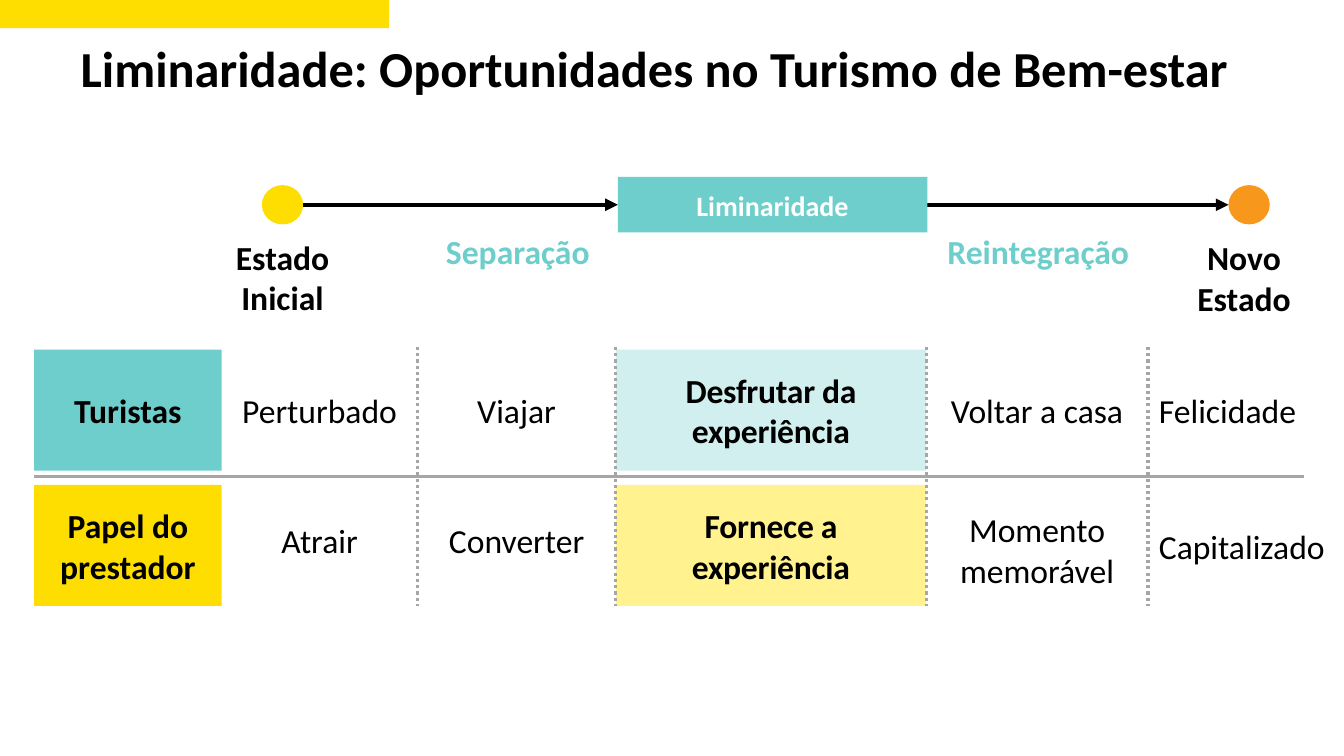
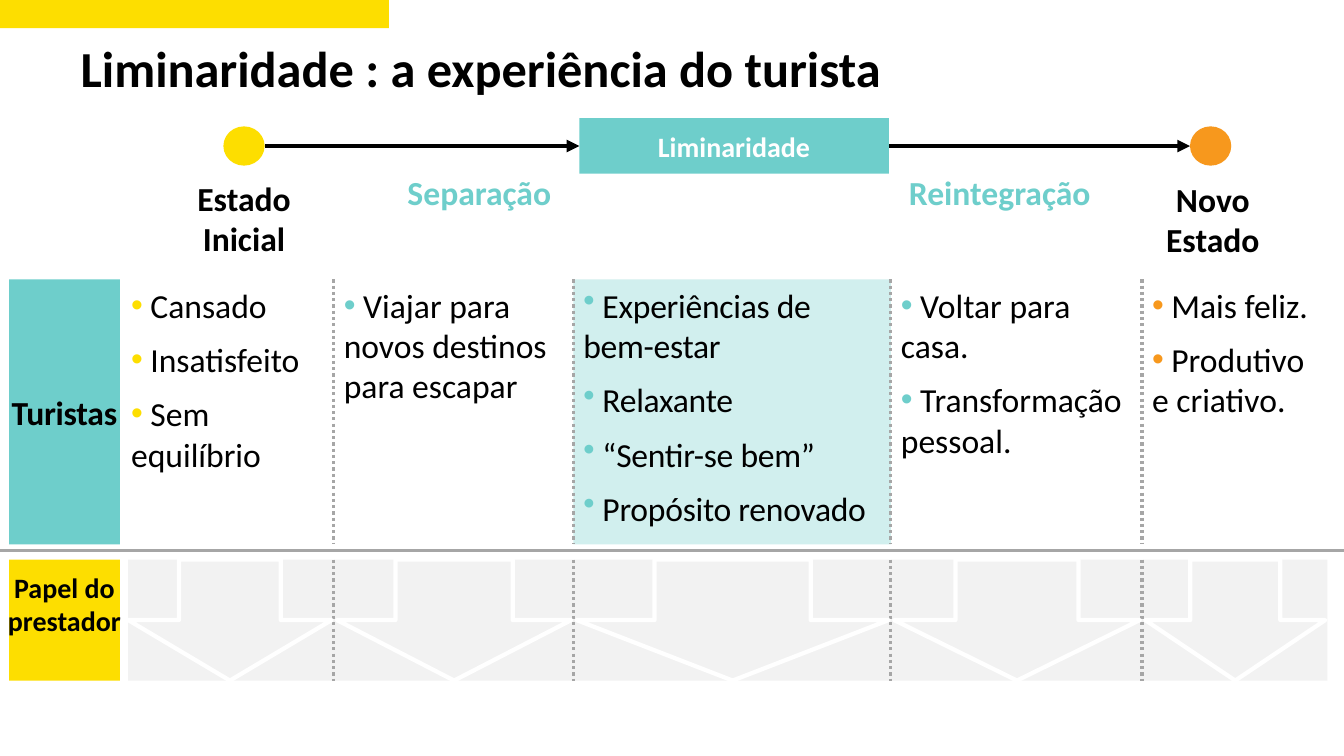
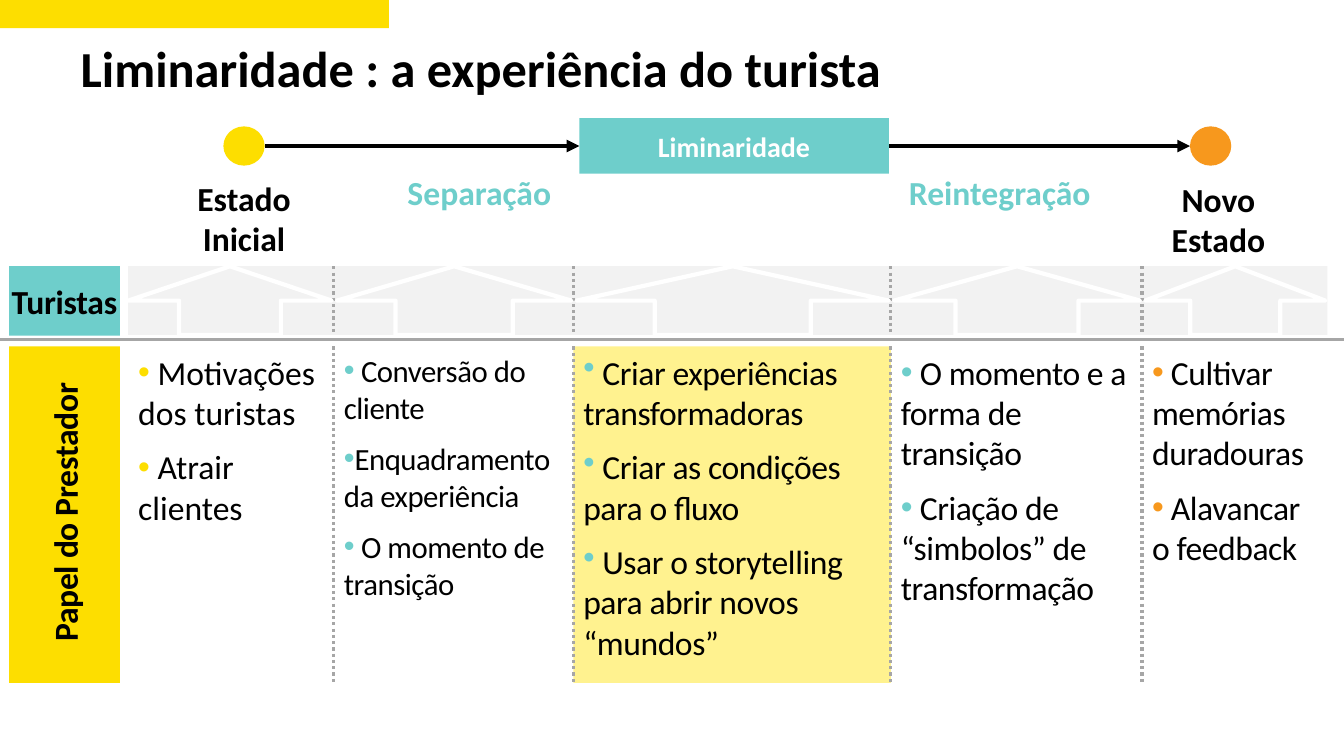
from dataclasses import dataclass
from itertools import pairwise
from typing import Any, Optional

from lxml import etree
from pptx import Presentation
from pptx import util as u
from pptx.dml import color as c
from pptx.enum import dml, shapes, text
from pptx.oxml import ns


@dataclass(frozen=True)
class Theme:
    font: str = "Calibri"
    yellow: str = "FDDE00"
    teal: str = "6ECECB"
    orange: str = "F7981D"
    pale_teal: str = "D1EFEE"
    pale_yellow: str = "FFF28F"
    gray: str = "A6A6A6"
    light: str = "F2F2F2"
    black: str = "000000"
    white: str = "FFFFFF"
    head: float = 36
    body: float = 24
    less: float = 22
    small: float = 20
    rule: float = 2.25
    thick: float = 3


T = Theme()
CENTER, LEFT = text.PP_ALIGN.CENTER, text.PP_ALIGN.LEFT
MIDDLE, TOP = text.MSO_ANCHOR.MIDDLE, text.MSO_ANCHOR.TOP
RECT = shapes.MSO_SHAPE.RECTANGLE
OVAL = shapes.MSO_SHAPE.OVAL
ARROW = shapes.MSO_SHAPE.DOWN_ARROW


@dataclass(frozen=True)
class Box:
    left: float
    top: float
    width: float
    height: float

    def place(self) -> list:
        return [u.Cm(n) for n in (self.left, self.top, self.width, self.height)]


@dataclass(frozen=True)
class Style:
    size: float = T.body
    bold: bool = False
    color: str = T.black
    align: Any = CENTER
    anchor: Any = MIDDLE
    wrap: bool = True
    track: int = 0
    after: float = 0
    lines: float = 1
    bullet: Optional[str] = None
    turn: Optional[str] = None
    inset: float = 0.13


@dataclass(frozen=True)
class Cell:
    row: int
    col: int
    words: str
    fill: Optional[str] = None
    shift: float = 0


@dataclass(frozen=True)
class Items:
    lines: tuple
    dot: str = T.teal
    size: float = T.body
    track: int = 0


@dataclass(frozen=True)
class Tag:
    words: tuple
    fill: str
    box: Box
    style: Style


@dataclass(frozen=True)
class Panel:
    list_top: float
    list_tall: float
    band_top: float
    band_tall: float
    rule: float
    first: float
    fill: str
    turn: int
    end_wide: float
    items: tuple
    tags: tuple


BOLD = Style(bold=True)
TIGHT = Style(bold=True, track=-20)
SIDE = Style(bold=True, track=-20, wrap=False)
TITLE = Style(size=T.head, bold=True, align=LEFT, anchor=TOP, lines=0.9)


def put(item: Any, **values: Any) -> None:
    for name, value in values.items():
        setattr(item, name, value)


def rgb(code: str) -> c.RGBColor:
    return c.RGBColor.from_string(code)


def write(shape: Any, lines: tuple, style: Style) -> None:
    frame = shape.text_frame
    frame.text = "\n".join(lines)
    put(frame, auto_size=text.MSO_AUTO_SIZE.NONE, word_wrap=style.wrap,
        vertical_anchor=style.anchor, margin_top=u.Cm(style.inset))
    if style.turn:
        shape.element.txBody.bodyPr.set("vert", style.turn)
    for para in frame.paragraphs:
        put(para, alignment=style.align, line_spacing=style.lines,
            space_before=u.Pt(0), space_after=u.Pt(style.after))
        for run in para.runs:
            put(run.font, name=T.font, size=u.Pt(style.size), bold=style.bold)
            run.font.color.rgb = rgb(style.color)
    for prop in shape.element.iter(ns.qn("a:rPr")):
        prop.set("spc", str(style.track))
    if style.bullet:
        for prop in shape.element.iter(ns.qn("a:pPr")):
            prop.set("marL", "0")
            prop.set("indent", "0")
            tint = etree.SubElement(prop, ns.qn("a:buClr"))
            etree.SubElement(tint, ns.qn("a:srgbClr")).set("val", style.bullet)
            etree.SubElement(prop, ns.qn("a:buChar")).set("char", "•")


def draw(canvas: Any, kind: Any, box: Box, fill: Optional[str] = None,
         line: Optional[str] = None) -> Any:
    shape = canvas.add_shape(kind, *box.place())
    shape.shadow.inherit = False
    if fill:
        shape.fill.solid()
        shape.fill.fore_color.rgb = rgb(fill)
    else:
        shape.fill.background()
    if line:
        shape.line.color.rgb = rgb(line)
        shape.line.width = u.Pt(T.thick)
    else:
        shape.line.fill.background()
    return shape


def label(canvas: Any, box: Box, lines: tuple, style: Style,
          fill: Optional[str] = None) -> None:
    shape = draw(canvas, RECT, box, fill) if fill else canvas.add_textbox(*box.place())
    write(shape, lines, style)


def link(canvas: Any, start: tuple, end: tuple, color: str = T.gray,
         width: float = T.rule, dots: bool = False, tip: bool = False) -> None:
    line = canvas.add_connector(shapes.MSO_CONNECTOR.STRAIGHT,
                                *(u.Cm(n) for n in start + end))
    line.line.color.rgb = rgb(color)
    line.line.width = u.Pt(width)
    if dots:
        line.line.dash_style = dml.MSO_LINE.ROUND_DOT
    if tip:
        edge = line.element.spPr.find(ns.qn("a:ln"))
        etree.SubElement(edge, ns.qn("a:tailEnd")).set("type", "triangle")
    etree.SubElement(line.element.spPr, ns.qn("a:effectLst"))


def split(canvas: Any, edges: tuple, top: float, tall: float) -> None:
    for x in edges:
        link(canvas, (x, top), (x, top + tall), dots=True)


def flow(slide: Any, x: float, y: float, end_left: float, end_wide: float) -> None:
    group = slide.shapes.add_group_shape().shapes
    dot_wide, dot_tall, mid, mid_wide, last = 1.04, 0.99, 8.97, 7.8, 24.36
    for left, fill in ((0, T.yellow), (last, T.orange)):
        draw(group, OVAL, Box(x + left, y - dot_tall / 2, dot_wide, dot_tall), fill)
    for start, end in ((dot_wide, mid), (mid + mid_wide, last)):
        link(group, (x + start, y), (x + end, y), T.black, T.thick, tip=True)
    label(group, Box(x + mid, y - 0.7, mid_wide, 1.4), ("Liminaridade",),
          Style(size=T.small, bold=True, color=T.white), T.teal)
    for words, left, drop, wide, tall, color in (
        ("Separação", 3.96, 0.53, 4.98, 1.3, T.teal),
        ("Reintegração", 16.77, 0.53, 5.59, 1.3, T.teal),
        ("Estado Inicial", -1.45, 0.67, 3.94, 2.31, T.black),
        ("Novo Estado", end_left, 0.69, end_wide, 2.31, T.black),
    ):
        label(group, Box(x + left, y + drop, wide, tall), (words,),
              Style(bold=True, color=color, anchor=TOP))


def start(deck: Any, layout: int, title: str) -> Any:
    slide = deck.slides.add_slide(deck.slide_layouts[layout])
    fit(slide.shapes.title, Box(1.78, 0.97, 29.82, 1.93))
    write(slide.shapes.title, (title,), TITLE)
    return slide


def fit(shape: Any, box: Box) -> None:
    put(shape, **dict(zip(("left", "top", "width", "height"), box.place())))


def brand(deck: Any, slide: Any) -> None:
    band = draw(slide.shapes, RECT, Box(0, 0, 9.8, 0.71), T.yellow)
    band.element.nvSpPr.cNvPr.id = 20
    deck.slide_master.shapes.element.append(band.element)


CELLS = (
    Cell(0, 3, "Desfrutar da experiência", T.pale_teal),
    Cell(1, 3, "Fornece a experiência", T.pale_yellow),
    Cell(1, 0, "Papel do prestador", T.yellow),
    Cell(0, 0, "Turistas", T.teal),
    Cell(0, 1, "Perturbado"),
    Cell(1, 1, "Atrair", shift=-0.15),
    Cell(0, 2, "Viajar"),
    Cell(1, 2, "Converter", shift=-0.15),
    Cell(1, 4, "Momento memorável", shift=0.1),
    Cell(0, 4, "Voltar a casa"),
    Cell(0, 5, "Felicidade"),
    Cell(1, 5, "Capitalizado"),
)


def matrix(slide: Any) -> None:
    edges = (0.86, 5.59, 10.52, 15.52, 23.34, 28.93)
    tops, tall = (8.81, 12.22), 3.05
    for cell in CELLS:
        left = edges[cell.col]
        ends = edges[1:] + ((32.94, 33.66)[cell.row],)
        box = Box(left, tops[cell.row] + cell.shift, ends[cell.col] - left, tall)
        style = Style() if not cell.fill else TIGHT if cell.col else BOLD
        label(slide.shapes, box, (cell.words,), style, cell.fill)
    split(slide.shapes, edges[2:], 8.74, 6.52)
    link(slide.shapes, (0.86, 12), (32.87, 12))


EDGES = (8.41, 14.45, 22.45, 28.78)
FINAL = 33.45


def detail(slide: Any, panel: Panel) -> None:
    canvas = slide.shapes
    holders = iter([slide.placeholders[n] for n in (1, 2, 3, 4)])
    spans = pairwise((panel.first,) + EDGES + (FINAL,))
    for col, ((left, right), items) in enumerate(zip(spans, panel.items)):
        box = Box(left, panel.list_top, right - left, panel.list_tall)
        if col == 2:
            shape = draw(canvas, RECT, box, panel.fill)
        else:
            shape = next(holders)
            fit(shape, box)
        write(shape, items.lines, Style(
            size=items.size, align=LEFT, anchor=TOP, after=10,
            track=items.track, bullet=items.dot))
    split(canvas, EDGES, panel.list_top, panel.list_tall)
    link(canvas, (0, panel.rule), (33.87, panel.rule))
    draw(canvas, RECT, Box(3.23, panel.band_top, FINAL - 3.23, panel.band_tall), T.light)
    split(canvas, EDGES, panel.band_top, panel.band_tall)
    for left, right in pairwise((3.15,) + EDGES + (FINAL,)):
        box = Box(left + 0.08, panel.band_top, right - left - 0.13, panel.band_tall)
        draw(canvas, ARROW, box, line=T.white).rotation = panel.turn
    for tag in panel.tags:
        label(canvas, tag.box, tag.words, tag.style, tag.fill)
    flow(slide, 5.63, 3.68, 23.5, panel.end_wide)


PANELS = (
    Panel(
        7.04, 6.68, 14.1, 3.05, 13.88, 3.05, T.pale_teal, 0, 2.87,
        (
            Items((" Cansado", " Insatisfeito", " Sem equilíbrio"), T.yellow),
            Items((" Viajar para novos destinos para escapar",)),
            Items((" Experiências de bem-estar", " Relaxante",
                   " “Sentir-se bem”", " Propósito renovado"), track=-20),
            Items((" Voltar para casa.", " Transformação pessoal.")),
            Items((" Mais feliz.", " Produtivo e criativo."), T.orange),
        ),
        (
            Tag(("Papel do", "prestador"), T.yellow, Box(0.23, 14.1, 2.79, 3.05),
                Style(size=T.small, bold=True, wrap=False, anchor=TOP, inset=0.27)),
            Tag(("Turistas",), T.teal, Box(0.23, 7.04, 2.79, 6.68), SIDE),
        ),
    ),
    Panel(
        8.73, 8.48, 6.71, 1.73, 8.55, 3.23, T.pale_yellow, 180, 3.15,
        (
            Items((" Motivações dos turistas", " Atrair clientes"), T.yellow),
            Items((" Conversão do cliente", "Enquadramento da experiência",
                   " O momento de transição"), size=T.less, track=-30),
            Items((" Criar experiências transformadoras",
                   " Criar as condições para o fluxo",
                   " Usar o storytelling para abrir novos “mundos”"), track=-30),
            Items((" O momento e a forma de transição",
                   " Criação de “simbolos” de transformação"), track=-30),
            Items((" Cultivar memórias duradouras", " Alavancar o feedback"),
                  T.orange, track=-30),
        ),
        (
            Tag(("Papel do Prestador",), T.yellow, Box(0.23, 8.73, 2.79, 8.48),
                Style(bold=True, track=-20, wrap=False, turn="vert270")),
            Tag(("Turistas",), T.teal, Box(0.23, 6.71, 2.79, 1.75), SIDE),
        ),
    ),
)


def main() -> None:
    deck = Presentation()
    put(deck, slide_width=u.Cm(33.87), slide_height=u.Cm(19.05))
    slide = start(deck, 5, "Liminaridade: Oportunidades no Turismo de Bem-estar")
    brand(deck, slide)
    matrix(slide)
    flow(slide, 6.6, 5.16, 23.24, 3.02)
    for panel in PANELS:
        detail(start(deck, 4, "Liminaridade : a experiência do turista"), panel)
    deck.save("out.pptx")


if __name__ == "__main__":
    main()
